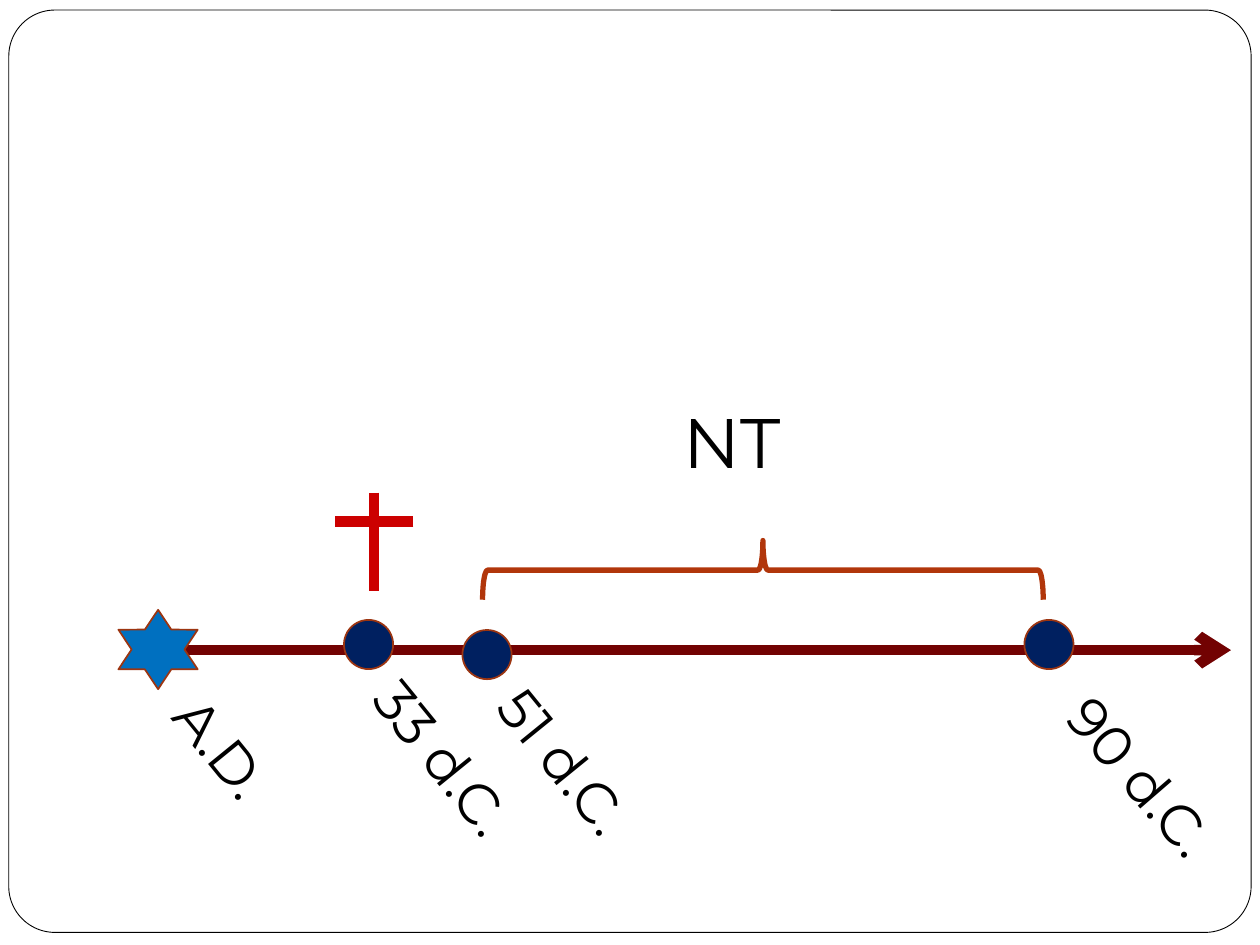
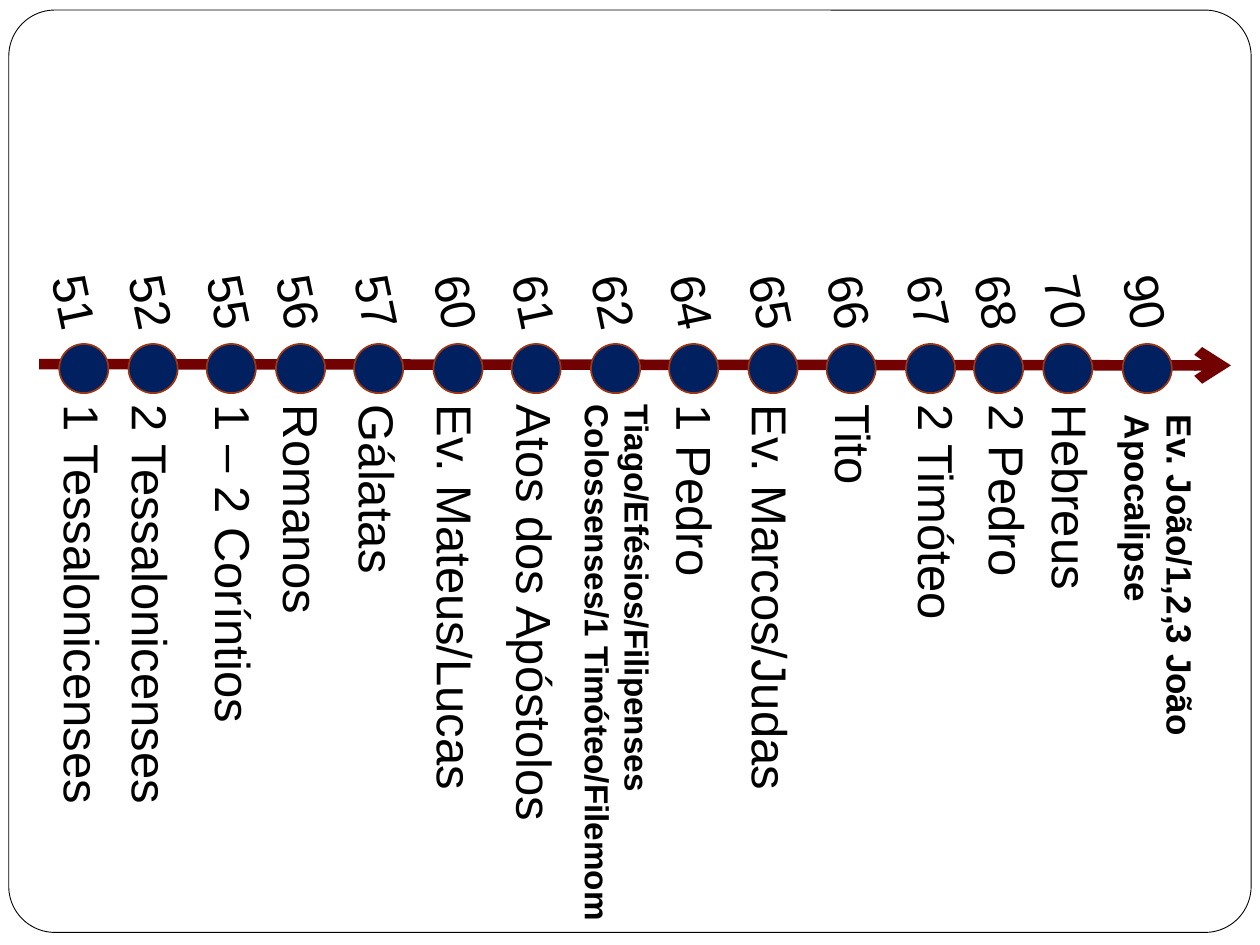
from dataclasses import dataclass

from lxml.etree import SubElement
from pptx import Presentation
from pptx.dml.color import RGBColor
from pptx.enum.shapes import MSO_CONNECTOR, MSO_SHAPE
from pptx.enum.text import MSO_AUTO_SIZE, PP_ALIGN
from pptx.oxml.ns import qn
from pptx.util import Inches, Pt

COLORS = {
    "paper": "FFFFFF",
    "ink": "000000",
    "axis": "720202",
    "dot": "002060",
    "outline": "9C3511",
    "brace": "B1360B",
    "star": "0070C0",
    "cross": "CC0000",
}
DOT_SIZE = 0.39
AXIS_END = 9.77


@dataclass
class Milestone:
    year: str
    dot_left: float
    label_center: float
    books: tuple
    size: int = 28
    bold: bool = False
    label_middle: float = 5.66
    label_height: float = 0.57
    year_shift: float = 0


MILESTONES = [
    Milestone("51", 0.47, 0.66, ("1 Tessalonicenses",), year_shift=-0.06),
    Milestone("52", 1.02, 1.2, ("2 Tessalonicenses",)),
    Milestone("55", 1.64, 1.86, ("1 – 2 Coríntios",)),
    Milestone("56", 2.19, 2.4, ("Romanos",)),
    Milestone("57", 2.81, 3, ("Gálatas",)),
    Milestone("60", 3.44, 3.62, ("Ev. Mateus/Lucas",)),
    Milestone("61", 4.06, 4.25, ("Atos dos Apóstolos",)),
    Milestone("62", 4.69, 4.9,
              ("Tiago/Efésios/Filipenses", "Colossenses/1 Timóteo/Filemom"),
              size=19, bold=True, label_height=0.74),
    Milestone("64", 5.31, 5.52, ("1 Pedro",)),
    Milestone("65", 5.94, 6.12, ("Ev. Marcos/Judas",)),
    Milestone("66", 6.56, 6.78, ("Tito",)),
    Milestone("67", 7.19, 7.44, ("2 Timóteo",)),
    Milestone("68", 7.73, 8, ("2 Pedro",)),
    Milestone("70", 8.28, 8.5, ("Hebreus",)),
    Milestone("90", 8.91, 9.2, ("Ev. João/1,2,3 João", "Apocalipse"),
              size=20, bold=True, label_middle=5.74, label_height=0.77),
]


def color(name):
    return RGBColor.from_string(COLORS[name])


def add_preset(page, preset, left, top, width, height, fill, line, weight):
    shape = page.shapes.add_shape(
        preset, Inches(left), Inches(top), Inches(width), Inches(height))
    shape.shadow.inherit = False
    if fill:
        shape.fill.solid()
        shape.fill.fore_color.rgb = color(fill)
    else:
        shape.fill.background()
    shape.line.color.rgb = color(line)
    shape.line.width = Pt(weight)
    return shape


def add_dot(page, left, top):
    add_preset(page, MSO_SHAPE.OVAL, left, top, DOT_SIZE, DOT_SIZE,
               "dot", "outline", 1)


def add_thick_line(page, start, end, line, arrow=False):
    connector = page.shapes.add_connector(
        MSO_CONNECTOR.STRAIGHT, *map(Inches, start + end))
    connector.line.color.rgb = color(line)
    connector.line.width = Pt(6)
    if arrow:
        SubElement(connector.line._get_or_add_ln(), qn("a:tailEnd"), type="arrow")
    SubElement(connector.element.spPr, qn("a:effectLst"))


def add_label(page, lines, center, middle, width, height, font, size,
              rotation=0, bold=False, wrap=True, align=PP_ALIGN.LEFT):
    """Place text by the centre of its box, the point it turns around."""
    box = page.shapes.add_textbox(
        Inches(center - width / 2), Inches(middle - height / 2),
        Inches(width), Inches(height))
    box.rotation = rotation
    frame = box.text_frame
    frame.text = "\n".join(lines)
    frame.word_wrap = wrap
    frame.auto_size = MSO_AUTO_SIZE.SHAPE_TO_FIT_TEXT
    for para in frame.paragraphs:
        para.alignment = align
        para.font.name = font
        para.font.size = Pt(size)
        para.font.bold = bold
        para.font.color.rgb = color("ink")


def add_frame_to_layout(deck, layout):
    """Draw the rounded border on the first page, then move it to the layout."""
    page = deck.slides.add_slide(layout)
    border = add_preset(page, MSO_SHAPE.ROUNDED_RECTANGLE, 0.07, 0.08, 9.86, 7.32,
                        "paper", "ink", 0.5)
    border.adjustments[0] = 0.05
    layout.shapes.element.append(border.element)
    return page


def build_overview(page):
    axis_y = 5.16
    add_thick_line(page, (1.17, axis_y), (AXIS_END, axis_y), "axis", arrow=True)
    add_preset(page, MSO_SHAPE.STAR_6_POINT, 0.94, 4.84, 0.63, 0.63,
               "star", "outline", 1)
    brace = add_preset(page, MSO_SHAPE.RIGHT_BRACE, 5.82, 2.3, 0.47, 4.45,
                       None, "brace", 3)
    brace.rotation = 270
    for left, top in ((2.73, 4.92), (8.13, 4.92), (3.67, 5)):
        add_dot(page, left, top)

    add_thick_line(page, (2.97, 3.91), (2.97, 4.69), "cross")
    add_thick_line(page, (3.28, 4.14), (2.66, 4.14), "cross")

    add_label(page, ["NT"], 5.81, 3.5, 2.39, 0.77, "Montserrat", 40,
              wrap=False, align=PP_ALIGN.CENTER)
    add_label(page, ["A.D."], 1.98, 6.2, 1.77, 0.64, "Montserrat", 32, 50.9)
    for date, center, middle, rotation in (
            ("33 d.C.", 3.61, 6.12, 50.9),
            ("51 d.C.", 4.6, 6.18, 50.9),
            ("90 d.C.", 9.13, 6.24, 49.1)):
        add_label(page, [date], center, middle, 1.9, 0.64, "Montserrat", 32,
                  rotation, wrap=False)


def build_book_timeline(page):
    add_thick_line(page, (0.31, 2.89), (AXIS_END, 2.9), "axis", arrow=True)
    for item in MILESTONES:
        add_dot(page, item.dot_left, 2.73)
        year_center = item.dot_left + DOT_SIZE / 2 + item.year_shift
        add_label(page, [item.year], year_center, 2.42, 0.68, 0.57,
                  "Arial", 28, 78.1)
        add_label(page, item.books, item.label_center, item.label_middle,
                  5.09, item.label_height, "Arial", item.size, 90, item.bold)


def main():
    deck = Presentation()
    deck.slide_width, deck.slide_height = Inches(10), Inches(7.5)
    blank = deck.slide_layouts[6]
    build_overview(add_frame_to_layout(deck, blank))
    build_book_timeline(deck.slides.add_slide(blank))
    deck.save("out.pptx")


if __name__ == "__main__":
    main()
